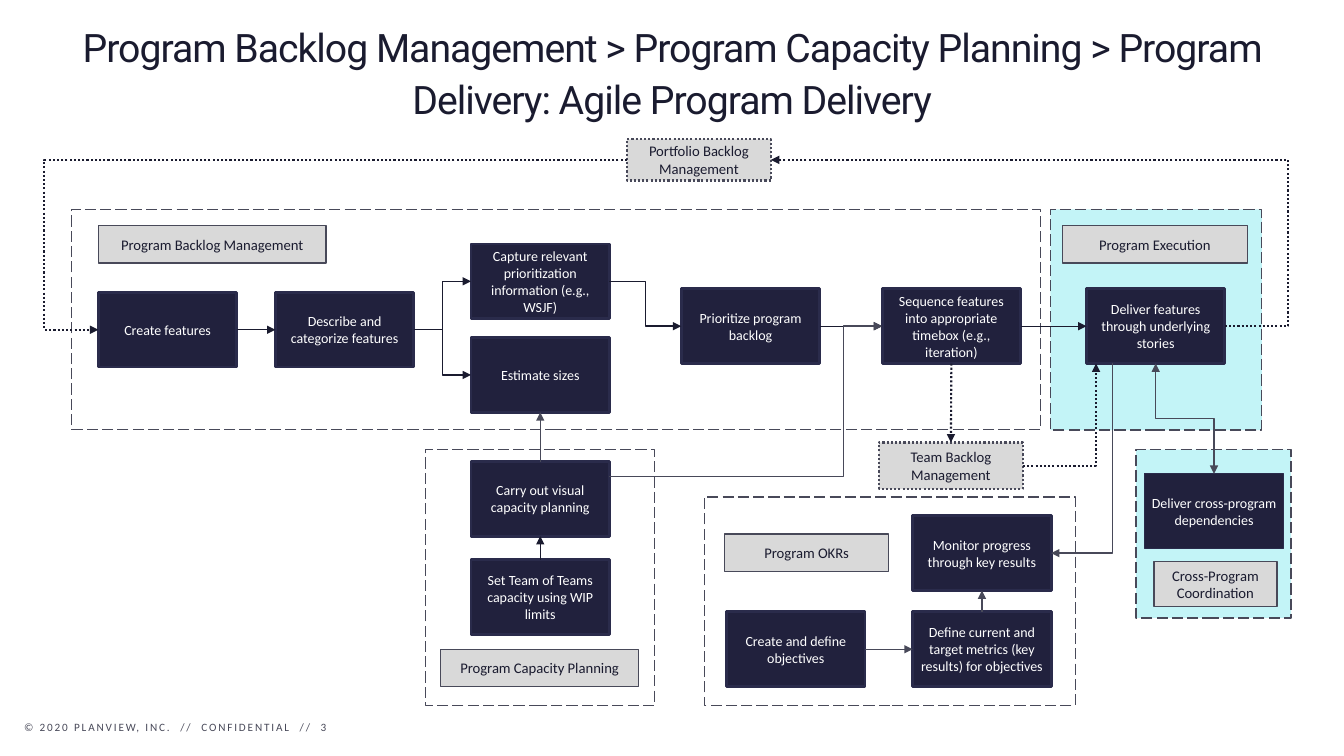
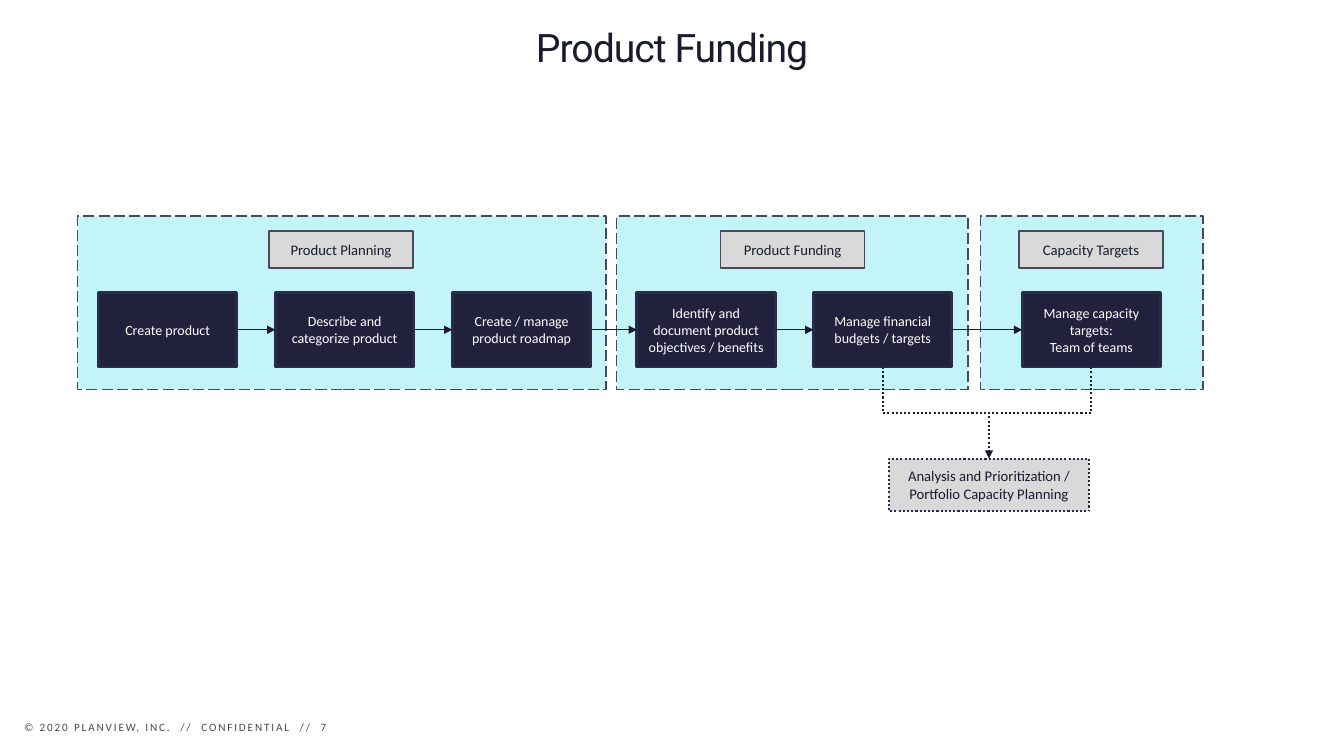
from dataclasses import dataclass

from lxml import etree
from pptx import Presentation
from pptx.dml.color import RGBColor
from pptx.enum.dml import MSO_LINE
from pptx.enum.shapes import MSO_CONNECTOR, MSO_SHAPE
from pptx.enum.text import MSO_ANCHOR, PP_ALIGN
from pptx.oxml.ns import qn
from pptx.util import Cm, Pt

RECT = MSO_SHAPE.RECTANGLE
STRAIGHT, ELBOW = MSO_CONNECTOR.STRAIGHT, MSO_CONNECTOR.ELBOW
LEFT, CENTER = PP_ALIGN.LEFT, PP_ALIGN.CENTER
TOP, MIDDLE = MSO_ANCHOR.TOP, MSO_ANCHOR.MIDDLE
DASH, DOT = MSO_LINE.LONG_DASH, MSO_LINE.ROUND_DOT


@dataclass(frozen=True)
class Theme:
    ink: str = "1A1B2F"
    grey: str = "484959"
    navy: str = "21213D"
    navy_edge: str = "2A2B4B"
    silver: str = "D9D9D9"
    aqua: str = "12D6E0"
    white: str = "FFFFFF"
    title_font: str = "Roboto"
    body_font: str = "Calibri"
    title_pt: float = 28
    title_line_pt: float = 37.3
    tag_pt: float = 10.5
    step_pt: float = 10
    footer_pt: float = 8
    line_pt: float = 1
    dot_pt: float = 1.5
    edge_pt: float = 2.08


T = Theme()
STEP_W, STEP_H, TAG_H = 3.49, 1.88, 0.94


def rgb(value):
    return RGBColor.from_string(value)


def write(shape, text, size, color=T.ink, font=T.body_font, align=CENTER,
          anchor=MIDDLE, inset=(0.25, 0.13), spacing=0, line_pt=None):
    """Fill a shape with text; each line of text is a paragraph."""
    tf = shape.text_frame
    tf.word_wrap = True
    tf.vertical_anchor = anchor
    tf.margin_left = tf.margin_right = Cm(inset[0])
    tf.margin_top = tf.margin_bottom = Cm(inset[1])
    for i, line in enumerate(text.split("\n")):
        p = tf.add_paragraph() if i else tf.paragraphs[0]
        p.alignment = align
        if line_pt:
            p.line_spacing = Pt(line_pt)
        r = p.add_run()
        r.text = line
        r.font.name, r.font.size = font, Pt(size)
        r.font.color.rgb = rgb(color)
        if spacing:
            r.font._element.set("spc", str(int(spacing * 100)))


def style_line(line, color, width, dash=None):
    line.color.rgb = rgb(color)
    line.width = Pt(width)
    if dash:
        line.dash_style = dash


def rect(s, x, y, w, h, fill, edge, edge_pt, dash=None):
    sp = s.shapes.add_shape(RECT, Cm(x), Cm(y), Cm(w), Cm(h))
    sp.shadow.inherit = False
    sp.fill.solid()
    sp.fill.fore_color.rgb = rgb(fill)
    style_line(sp.line, edge, edge_pt, dash)
    return sp


def zone(s, x, y, w, h, color=T.aqua):
    """Dashed area with a 25 % tint."""
    sp = rect(s, x, y, w, h, color, T.grey, T.line_pt, DASH)
    clr = sp._element.spPr.find(qn("a:solidFill")).find(qn("a:srgbClr"))
    etree.SubElement(clr, qn("a:alpha")).set("val", "25000")


def step(s, x, y, text, edge_pt=T.edge_pt):
    sp = rect(s, x, y, STEP_W, STEP_H, T.navy, T.navy_edge, edge_pt)
    write(sp, text, T.step_pt, T.white, inset=(0.15, 0.08))
    return sp


def tag(s, x, y, w, text, h=TAG_H, edge=T.grey, dotted=False):
    sp = rect(s, x, y, w, h, T.silver, edge,
              T.dot_pt if dotted else T.line_pt, DOT if dotted else None)
    write(sp, text, T.tag_pt)
    return sp


def at(sp, fx, fy):
    """Point at a fraction of a shape's width and height."""
    return int(sp.left + fx * sp.width), int(sp.top + fy * sp.height)


def left(sp):
    return at(sp, 0, 0.5)


def right(sp):
    return at(sp, 1, 0.5)


def top(sp):
    return at(sp, 0.5, 0)


def bottom(sp):
    return at(sp, 0.5, 1)


def elbow(s, start, end, way, bend):
    """Bent connector; way lists its segments, such as "hv" or "vhv"."""
    (x1, y1), (x2, y2) = start, end
    dx, dy = x2 - x1, y2 - y1
    turn = 0
    if way[0] == "v":
        # An upright route is a level one, turned about its centre.
        turn = 90 if dx < 0 else 270
        w, h = abs(dy), abs(dx)
        x1, x2 = (x1 + x2 - w) // 2, (x1 + x2 + w) // 2
        y1, y2 = (y1 + y2 - h) // 2, (y1 + y2 + h) // 2
        if (dy > 0) != (turn == 90):
            x1, x2 = x2, x1
    c = s.shapes.add_connector(ELBOW, x1, y1, x2, y2)
    spPr = c._element.spPr
    if turn:
        spPr.find(qn("a:xfrm")).set("rot", str(turn * 60000))
    geom = spPr.find(qn("a:prstGeom"))
    if len(way) == 2:
        geom.set("prst", "bentConnector2")
    elif bend is not None:
        axis = "hv".index(way[0])
        ratio = (Cm(bend) - start[axis]) / (end[axis] - start[axis])
        gd = etree.SubElement(geom.find(qn("a:avLst")), qn("a:gd"))
        gd.set("name", "adj1")
        gd.set("fmla", f"val {round(ratio * 100000)}")
    return c


def link(s, start, end, way="", bend=None, color=T.ink, dotted=False,
         head=False, tail=True):
    """Straight or bent line; bend is where the middle segment lies, in cm."""
    if way:
        c = elbow(s, start, end, way, bend)
    else:
        c = s.shapes.add_connector(STRAIGHT, *start, *end)
    style_line(c.line, color, T.dot_pt if dotted else T.line_pt,
               DOT if dotted else None)
    spPr = c._element.spPr
    ln = spPr.find(qn("a:ln"))
    for name, wanted in (("a:headEnd", head), ("a:tailEnd", tail)):
        if wanted:
            etree.SubElement(ln, qn(name)).set("type", "triangle")
    etree.SubElement(spPr, qn("a:effectLst"))


def text_box(s, x, y, w, h, text, size, **fmt):
    write(s.shapes.add_textbox(Cm(x), Cm(y), Cm(w), Cm(h)), text, size, **fmt)


def new_slide(prs, title, number):
    s = prs.slides.add_slide(prs.slide_layouts[6])
    text_box(s, 0.36, 18.03, 9.45, 0.61,
             f"© 2020 PLANVIEW, INC.  //  CONFIDENTIAL  //  {number}",
             T.footer_pt, color=T.grey, align=LEFT, anchor=TOP, spacing=1.3)
    text_box(s, 1.3, 0.2, 31.27, 1.96, title, T.title_pt, font=T.title_font,
             anchor=TOP, inset=(0.25, 0.25), spacing=-0.7,
             line_pt=T.title_line_pt)
    return s


def program_delivery(prs):
    s = new_slide(prs, "Program Backlog Management > Program Capacity Planning "
                       "> Program Delivery: Agile Program Delivery", 3)
    zone(s, 26.47, 5.28, 5.33, 5.56)
    zone(s, 28.63, 11.33, 3.91, 4.24)
    zone(s, 17.75, 12.52, 9.35, 5.26, T.white)
    zone(s, 1.8, 5.28, 24.43, 5.54, T.white)
    zone(s, 10.72, 11.33, 5.77, 6.45, T.white)

    create = step(s, 2.48, 7.37, "Create features")
    describe = step(s, 6.94, 7.37, "Describe and categorize features")
    capture = step(s, 11.87, 6.15, "Capture relevant prioritization "
                                   "information (e.g., WSJF)")
    estimate = step(s, 11.87, 8.51, "Estimate sizes")
    prioritize = step(s, 17.17, 7.28, "Prioritize program backlog")
    sequence = step(s, 22.23, 7.28, "Sequence features into appropriate "
                                    "timebox (e.g., iteration)")
    deliver = step(s, 27.38, 7.28, "Deliver features through underlying stories")
    capacity = step(s, 11.87, 11.63, "Carry out visual capacity planning")
    limits = step(s, 11.87, 14.1, "Set Team of Teams capacity using WIP limits")
    objectives = step(s, 18.31, 15.42, "Create and define objectives")
    metrics = step(s, 23, 15.42, "Define current and target metrics "
                                 "(key results) for objectives")
    monitor = step(s, 23, 13, "Monitor progress through key results")
    cross = step(s, 28.85, 11.94, "Deliver cross-program dependencies",
                 edge_pt=T.line_pt)

    tag(s, 2.48, 5.69, 5.74, "Program Backlog Management")
    tag(s, 26.77, 5.69, 4.67, "Program Execution")
    tag(s, 11.1, 16.36, 5, "Program Capacity Planning")
    tag(s, 18.26, 13.46, 4.14, "Program OKRs")
    tag(s, 29.08, 14.15, 3.1, "Cross-Program Coordination", h=1.14)
    portfolio = tag(s, 15.8, 3.51, 3.63, "Portfolio Backlog Management",
                    h=1.04, dotted=True)
    team = tag(s, 22.15, 11.15, 3.63, "Team Backlog Management",
               h=1.17, dotted=True)

    for a, b in ((create, describe), (prioritize, sequence),
                 (sequence, deliver)):
        link(s, right(a), left(b))
    for a, b in ((describe, capture), (describe, estimate),
                 (capture, prioritize)):
        link(s, right(a), left(b), "hvh")
    link(s, top(limits), bottom(capacity))
    link(s, top(capacity), bottom(estimate), color=T.grey)
    link(s, at(capacity, 1, 0.2), left(sequence), "hvh", 21.26, color=T.grey)
    link(s, right(objectives), left(metrics), color=T.grey)
    link(s, top(metrics), bottom(monitor), color=T.grey)
    link(s, at(deliver, 0.19, 1), right(monitor), "vh", color=T.grey)
    link(s, bottom(deliver), top(cross), "vhv", color=T.grey, head=True)
    link(s, bottom(sequence), top(team), dotted=True)
    link(s, right(team), at(deliver, 0.07, 1), "hv", dotted=True)
    link(s, left(portfolio), left(create), "hvh", 1.12, dotted=True)
    link(s, right(deliver), right(portfolio), "hvh", 32.46, dotted=True)


def product_funding(prs):
    s = new_slide(prs, "Product Funding", 7)
    for x, w, tag_x, text in ((1.96, 13.31, 6.78, "Product Planning"),
                              (15.54, 8.86, 18.16, "Product Funding"),
                              (24.71, 5.61, 25.68, "Capacity Targets")):
        zone(s, x, 5.44, w, 4.37)
        tag(s, tag_x, 5.82, 3.63, text)

    steps = [step(s, x, 7.37, text) for x, text in (
        (2.48, "Create product"),
        (6.94, "Describe and categorize product"),
        (11.4, "Create / manage product roadmap"),
        (16.05, "Identify and document product objectives / benefits"),
        (20.5, "Manage financial budgets / targets"),
        (25.76, "Manage capacity targets:\nTeam of teams"))]
    for a, b in zip(steps, steps[1:]):
        link(s, right(a), left(b))

    analysis = tag(s, 22.4, 11.56, 5.05, "Analysis and Prioritization / "
                   "Portfolio Capacity Planning", h=1.32, edge=T.navy_edge,
                   dotted=True)
    budgets, targets = steps[-2:]
    goal = top(analysis)
    junction = goal[0], (bottom(budgets)[1] + goal[1]) // 2
    link(s, bottom(targets), junction, "vh", dotted=True, tail=False)
    link(s, bottom(budgets), goal, "vhv", dotted=True)


def main():
    prs = Presentation()
    prs.slide_width, prs.slide_height = Cm(33.87), Cm(19.05)
    program_delivery(prs)
    product_funding(prs)
    prs.save("out.pptx")


if __name__ == "__main__":
    main()
